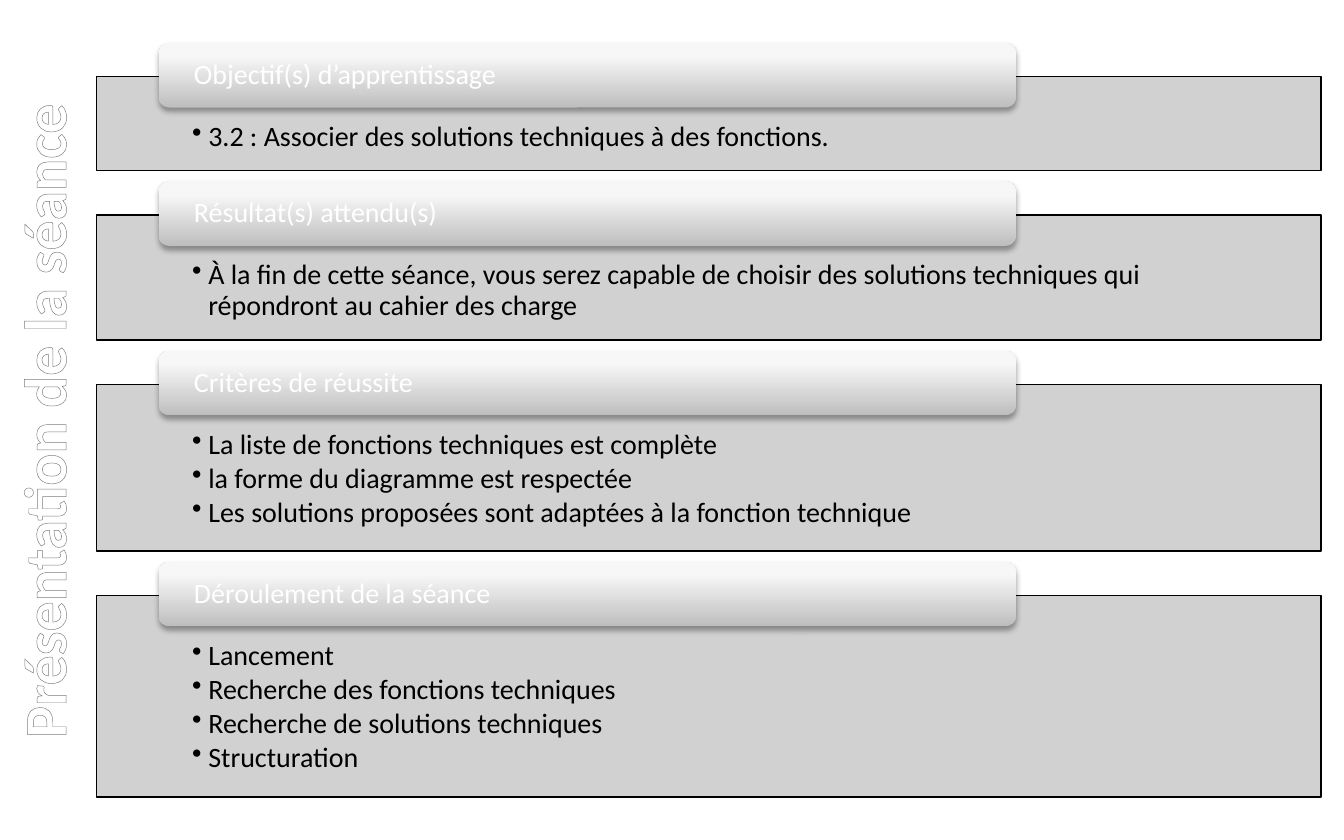
"""Build the lesson overview slide with its four headed panels."""
import pptx
import pptx.dml.color
import pptx.enum.shapes
import pptx.enum.text
import pptx.oxml
import pptx.oxml.ns
import pptx.util

PX = 9144
NS = pptx.oxml.ns.nsdecls("a")
KIND = pptx.enum.shapes.MSO_SHAPE
ANCHOR = pptx.enum.text.MSO_ANCHOR
ALIGN = pptx.enum.text.PP_ALIGN


def hue(code):
    return pptx.dml.color.RGBColor.from_string(code)


def grad(stops, angle):
    marks = "".join(
        f'<a:gs pos="{at * 1000}"><a:srgbClr val="{hue(code)}"/></a:gs>' for at, code in stops
    )
    return pptx.oxml.parse_xml(
        f'<a:gradFill {NS} rotWithShape="1"><a:gsLst>{marks}</a:gsLst>'
        f'<a:lin ang="{angle * 60000}" scaled="0"/></a:gradFill>'
    )


panels = [
    (70, "Objectif(s) d’apprentissage", ["3.2 : Associer des solutions techniques à des fonctions."]),
    (93, "Résultat(s) attendu(s)", [
        "À la fin de cette séance, vous serez capable de choisir des solutions techniques qui "
        "répondront au cahier des charge",
    ]),
    (124, "Critères de réussite", [
        "La liste de fonctions techniques est complète",
        "la forme du diagramme est respectée",
        "Les solutions proposées sont adaptées à la fonction technique",
    ]),
    (150, "Déroulement de la séance", [
        "Lancement",
        "Recherche des fonctions techniques",
        "Recherche de solutions techniques",
        "Structuration",
    ]),
]

deck = pptx.Presentation()
deck.slide_width = 1000 * PX
deck.slide_height = 625 * PX
slide = deck.slides.add_slide(deck.slide_layouts[5])

title = slide.shapes.title
title.left, title.top, title.width, title.height = [n * PX for n in (-281, 281, 625, 64)]
title.rotation = 270
frame = title.text_frame
frame.text = "Présentation de la séance"
frame.auto_size = pptx.enum.text.MSO_AUTO_SIZE.NONE
frame.vertical_anchor = ANCHOR.MIDDLE
frame.paragraphs[0].alignment = ALIGN.CENTER
run = frame.paragraphs[0].runs[0]
run.font.size = pptx.util.Pt(32)
run.font.bold = True
run.font.name = "Calibri"
edge = pptx.oxml.parse_xml(
    f'<a:ln {NS} w="10541"><a:solidFill><a:srgbClr val="{hue("7D7D7D")}"/></a:solidFill></a:ln>'
)
props = run._r.get_or_add_rPr()
props.insert(0, edge)
shades = [(0, "FFFFFF"), (9, "FFFFFF"), (50, "7F7F7F"), (79, "FFFFFF"), (100, "FFFFFF")]
props.insert(1, grad(shades, 90))

top = 57
for height, head, items in panels:
    panel = slide.shapes.add_shape(KIND.RECTANGLE, 72 * PX, top * PX, 911 * PX, height * PX)
    panel.shadow.inherit = False
    panel.fill.solid()
    panel.fill.fore_color.rgb = hue("CCCCCC")
    tint = panel._element.spPr.find(".//" + pptx.oxml.ns.qn("a:srgbClr"))
    tint.append(pptx.oxml.parse_xml(f'<a:alpha {NS} val="90000"/>'))
    panel.line.color.rgb = hue("000000")
    panel.line.width = pptx.util.Pt(0.75)
    frame = panel.text_frame
    frame.word_wrap = True
    frame.vertical_anchor = ANCHOR.TOP
    frame.margin_left = frame.margin_right = 71 * PX
    frame.margin_top = 34 * PX
    frame.margin_bottom = 12 * PX
    frame.text = "\n".join(items)
    for para in frame.paragraphs:
        props = para._p.get_or_add_pPr()
        props.set("marL", str(12 * PX))
        props.set("indent", str(-12 * PX))
        props.append(pptx.oxml.parse_xml(f'<a:buChar {NS} char="•"/>'))
        para.level = 1
        para.alignment = ALIGN.LEFT
        para.line_spacing = 0.9
        para.space_after = pptx.util.Pt(2)

    tab = slide.shapes.add_shape(
        KIND.ROUNDED_RECTANGLE, 118 * PX, (top - 25) * PX, 638 * PX, 48 * PX
    )
    tab.line.fill.background()
    tab._element.spPr.insert(2, grad([(0, "BEBEBE"), (80, "F7F7F7"), (100, "F8F8F8")], 270))
    tab.shadow.inherit = False
    tab._element.spPr.find(pptx.oxml.ns.qn("a:effectLst")).append(pptx.oxml.parse_xml(
        f'<a:outerShdw {NS} blurRad="40000" dist="23000" dir="5400000" rotWithShape="0">'
        f'<a:srgbClr val="{hue("000000")}"><a:alpha val="35000"/></a:srgbClr></a:outerShdw>'
    ))
    frame = tab.text_frame
    frame.word_wrap = True
    frame.vertical_anchor = ANCHOR.MIDDLE
    frame.margin_left = frame.margin_right = 24 * PX
    frame.margin_top = frame.margin_bottom = 0
    frame.text = head
    frame.paragraphs[0].alignment = ALIGN.LEFT
    frame.paragraphs[0].line_spacing = 0.9

    for shape, ink in ((panel, "000000"), (tab, "FFFFFF")):
        for para in shape.text_frame.paragraphs:
            font = para.runs[0].font
            font.size = pptx.util.Pt(15)
            font.name = "Calibri"
            font.color.rgb = hue(ink)
    top += height + 33

deck.save("out.pptx")
